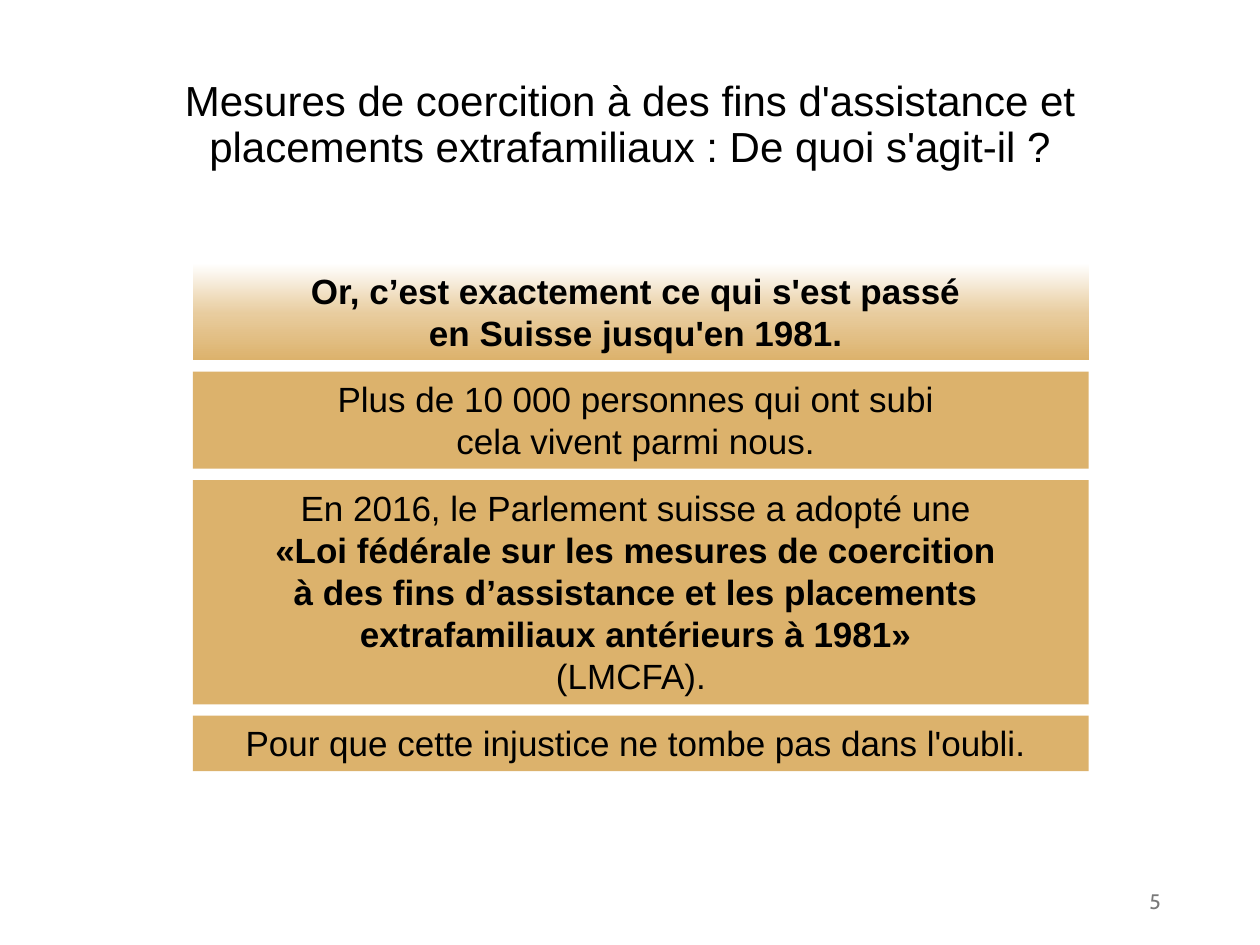
import copy

import pptx
import pptx.dml.color
import pptx.enum.dml
import pptx.enum.shapes
import pptx.enum.text
import pptx.util
from pptx.util import Inches

ALIGN = pptx.enum.text.PP_ALIGN
ANCHOR = pptx.enum.text.MSO_ANCHOR
GOLD = "DCB26C"
BANDS = [
    (2.09, 0.77, [("Or, c’est exactement ce qui s'est passé ", True),
                  ("en Suisse jusqu'en 1981. ", True)]),
    (2.95, 0.77, [("Plus de 10 000 personnes qui ont subi ", False),
                  ("cela vivent parmi nous. ", False)]),
    (3.81, 1.78, [("En 2016, le Parlement suisse a adopté une ", False),
                  ("«Loi fédérale sur les mesures de coercition ", True),
                  ("à des fins d’assistance et les placements ", True),
                  ("extrafamiliaux antérieurs à 1981» ", True),
                  ("(LMCFA).  ", False)]),
    (5.68, 0.44, [("Pour que cette injustice ne tombe pas dans l'oubli. ", False)]),
]


def color(value):
    return pptx.dml.color.RGBColor.from_string(value)


def style_paragraph(para, size, align, bold=False, font="Arial", ink="000000"):
    para.alignment = align
    para.font.name = font
    para.font.size = pptx.util.Pt(size)
    para.font.bold = bold
    para.font.color.rgb = color(ink)


def set_title(page, text):
    title = page.shapes.title
    title.left, title.top = Inches(0.69), Inches(0.4)
    title.width, title.height = Inches(8.62), Inches(1.2)
    title.text_frame.text = text
    title.text_frame.vertical_anchor = ANCHOR.MIDDLE
    para = title.text_frame.paragraphs[0]
    para.line_spacing = 0.9
    style_paragraph(para, 24, ALIGN.CENTER)


def add_band(page, top, height, lines):
    band = page.shapes.add_shape(
        pptx.enum.shapes.MSO_SHAPE.RECTANGLE,
        Inches(1.53), Inches(top), Inches(7.11), Inches(height))
    band.shadow.inherit = False
    band.fill.solid()
    band.fill.fore_color.rgb = color(GOLD)
    band.line.fill.background()
    frame = band.text_frame
    frame.word_wrap = True
    frame.vertical_anchor = ANCHOR.TOP
    frame.text = "\n".join(text for text, bold in lines)
    for para, (text, bold) in zip(frame.paragraphs, lines):
        style_paragraph(para, 20, ALIGN.CENTER, bold)
    return band


def fade_from_white(band):
    fill = band.fill
    fill.gradient()
    fill.gradient_angle = 270
    stop_list = fill._fill._gradFill.gsLst
    stop_list.append(copy.deepcopy(stop_list[-1]))
    stops = [(0, "FFFFFF"), (0.52, "E8CC9E"), (1, GOLD)]
    for stop, (position, value) in zip(fill.gradient_stops, stops):
        stop.position = position
        stop.color.rgb = color(value)


def add_page_number(page, number):
    box = page.shapes.add_textbox(
        Inches(7.06), Inches(6.95), Inches(2.25), Inches(0.4))
    frame = box.text_frame
    frame.word_wrap = True
    frame.vertical_anchor = ANCHOR.MIDDLE
    frame.text = number
    style_paragraph(frame.paragraphs[0], 12, ALIGN.RIGHT, font="Cabin", ink="797979")


def main():
    deck = pptx.Presentation()
    deck.slide_width, deck.slide_height = Inches(10), Inches(7.5)
    page = deck.slides.add_slide(deck.slide_layouts[5])
    set_title(page, "Mesures de coercition à des fins d'assistance et "
                    "placements extrafamiliaux : De quoi s'agit-il ?")
    bands = [add_band(page, *band) for band in BANDS]
    fade_from_white(bands[0])
    add_page_number(page, "5")
    deck.save("out.pptx")


if __name__ == "__main__":
    main()
